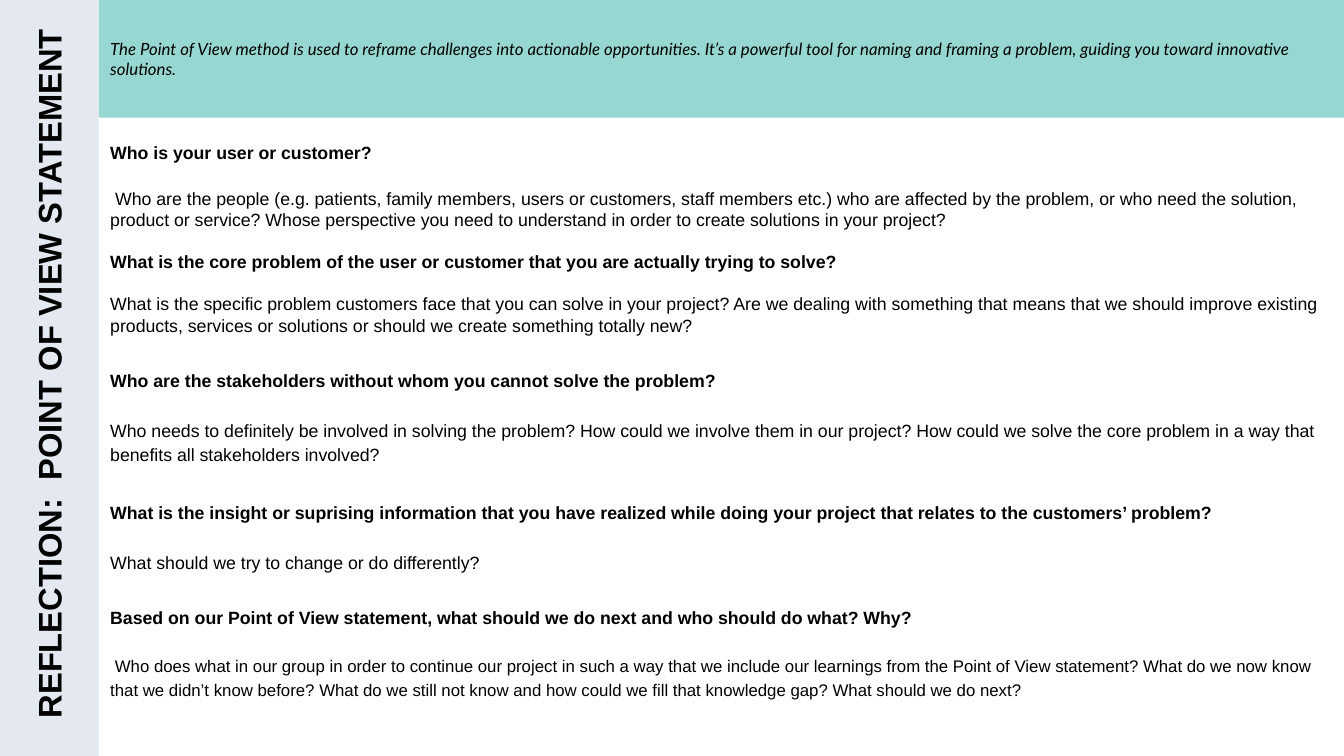
"""Build the Point of View reflection slide."""
from pptx import Presentation
from pptx.dml.color import RGBColor
from pptx.enum.shapes import MSO_SHAPE
from pptx.enum.text import MSO_ANCHOR, MSO_AUTO_SIZE, PP_ALIGN
from pptx.util import Inches, Pt

COLORS = {"sidebar": "E4E8F0", "banner": "96D7D1", "text": "000000"}
PAGE_W, PAGE_H = 20, 11.25
SIDEBAR_W, BANNER_H = 1.47, 1.75
TEXT_LEFT, TEXT_W = 1.64, 18.07

TITLE = "REFLECTION:  POINT OF VIEW STATEMENT"
INTRO = (
    "The Point of View method is used to reframe challenges into actionable opportunities. "
    "It’s a powerful tool for naming and framing a problem, guiding you toward innovative solutions."
)
SECTIONS = [
    {
        "top": 2.05, "height": 1.68, "width": TEXT_W,
        "question": "Who is your user or customer?", "question_line": 26.6,
        "prompt": " Who are the people (e.g. patients, family members, users or customers, staff members etc.) "
                  "who are affected by the problem, or who need the solution, product or service? "
                  "Whose perspective you need to understand in order to create solutions in your project?",
        "prompt_size": 19, "prompt_line": 22.8,
    },
    {
        "top": 3.73, "height": 1.25, "width": TEXT_W,
        "question": "What is the core problem of the user or customer that you are actually trying to solve?",
        "question_line": 22.8,
        "prompt": "What is the specific problem customers face that you can solve in your project? "
                  "Are we dealing with something that means that we should improve existing products, "
                  "services or solutions or should we create something totally new?",
        "prompt_size": 19, "prompt_line": 22.8,
    },
    {
        "top": 5.45, "height": 1.79, "width": TEXT_W,
        "question": "Who are the stakeholders without whom you cannot solve the problem?",
        "question_line": 26.6,
        "prompt": "Who needs to definitely be involved in solving the problem? "
                  "How could we involve them in our project? How could we solve the core problem "
                  "in a way that benefits all stakeholders involved?",
        "prompt_size": 19, "prompt_line": 26.6,
    },
    {
        "top": 7.42, "height": 1.08, "width": TEXT_W,
        "question": "What is the insight or suprising information that you have realized "
                    "while doing your project that relates to the customers’ problem?",
        "question_line": 26.6,
        "prompt": "What should we try to change or do differently?",
        "prompt_size": 19, "prompt_line": 26.6,
    },
    {
        "top": 8.97, "height": 1.41, "width": 18.2,
        "question": "Based on our Point of View statement, what should we do next and who should do what? Why?",
        "question_line": 26.6,
        "prompt": " Who does what in our group in order to continue our project in such a way that we include "
                  "our learnings from the Point of View statement? What do we now know that we didn’t know before? "
                  "What do we still not know and how could we fill that knowledge gap? What should we do next?",
        "prompt_size": 18, "prompt_line": 25.2,
    },
]


def add_panel(page, left, top, width, height, color):
    panel = page.shapes.add_shape(
        MSO_SHAPE.RECTANGLE, Inches(left), Inches(top), Inches(width), Inches(height))
    panel.shadow.inherit = False
    panel.fill.solid()
    panel.fill.fore_color.rgb = RGBColor.from_string(COLORS[color])
    panel.line.fill.background()
    return panel


def prepare_frame(box):
    frame = box.text_frame
    frame.word_wrap = True
    frame.auto_size = MSO_AUTO_SIZE.NONE
    frame.vertical_anchor = MSO_ANCHOR.TOP
    frame.margin_left = frame.margin_right = frame.margin_top = frame.margin_bottom = 0
    return frame


def add_text_frame(page, left, top, width, height):
    return prepare_frame(page.shapes.add_textbox(
        Inches(left), Inches(top), Inches(width), Inches(height)))


def write(para, text, size, line, font="Arial", bold=False, italic=False, before=0):
    para.line_spacing = Pt(line)
    para.space_before = Pt(before)
    span = para.add_run()
    span.text = text
    span.font.name = font
    span.font.size = Pt(size)
    span.font.bold = bold
    span.font.italic = italic
    span.font.color.rgb = RGBColor.from_string(COLORS["text"])


def add_title(page, sidebar):
    title = page.shapes.title
    title.left, title.top = Inches(-4.69), Inches(5.46)
    title.width, title.height = Inches(10.7), Inches(0.65)
    title.rotation = 270
    sidebar.element.addnext(title.element)
    para = prepare_frame(title).paragraphs[0]
    para.alignment = PP_ALIGN.RIGHT
    write(para, TITLE, 35, 49, bold=True)


def add_section(page, section):
    frame = add_text_frame(page, TEXT_LEFT, section["top"], section["width"], section["height"])
    write(frame.paragraphs[0], section["question"], 19, section["question_line"], bold=True)
    write(frame.add_paragraph(), section["prompt"], section["prompt_size"], section["prompt_line"],
          before=section["question_line"])


def main():
    deck = Presentation()
    deck.slide_width, deck.slide_height = Inches(PAGE_W), Inches(PAGE_H)
    page = deck.slides.add_slide(deck.slide_layouts[5])
    sidebar = add_panel(page, 0, 0, SIDEBAR_W, PAGE_H, "sidebar")
    add_panel(page, SIDEBAR_W, 0, PAGE_W - SIDEBAR_W, BANNER_H, "banner")
    add_title(page, sidebar)
    for section in SECTIONS:
        add_section(page, section)
    intro = add_text_frame(page, TEXT_LEFT, 0.58, 17.73, 0.58)
    write(intro.paragraphs[0], INTRO, 18, 21.6, font="Lato", italic=True)
    deck.save("out.pptx")


if __name__ == "__main__":
    main()
